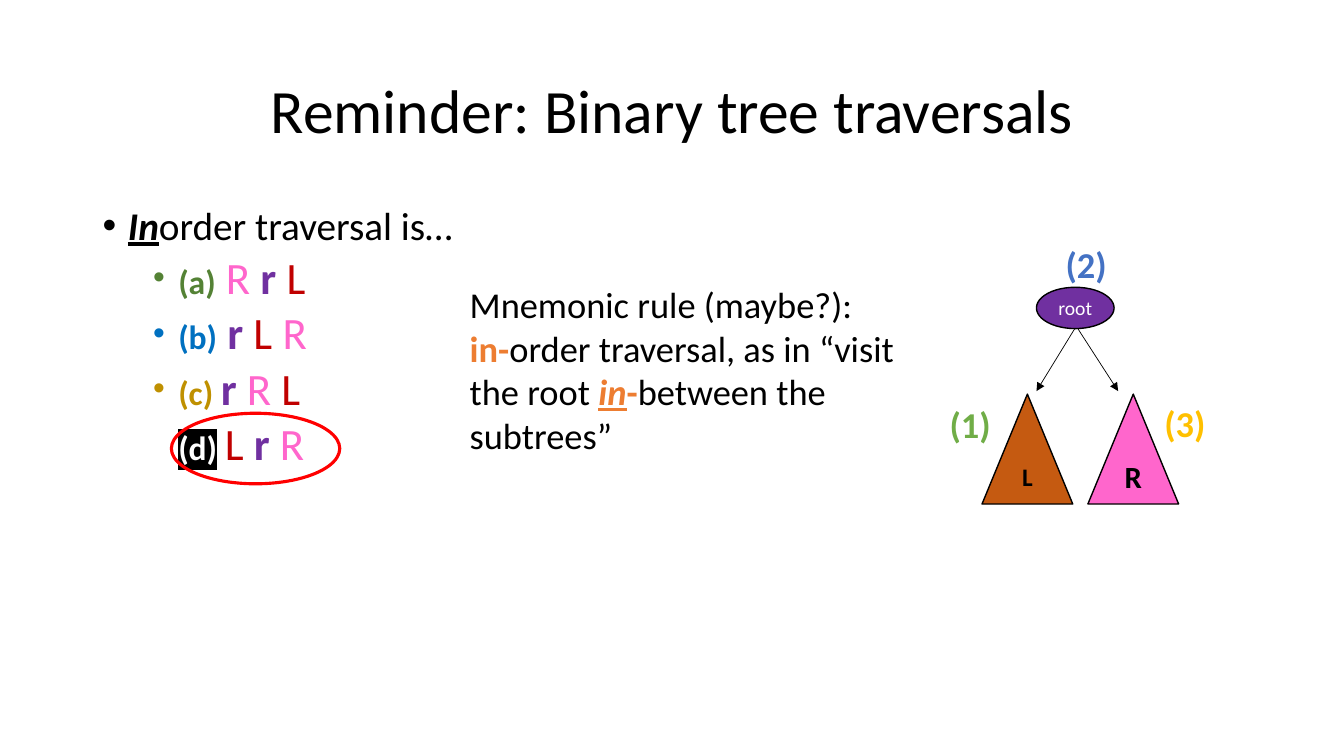
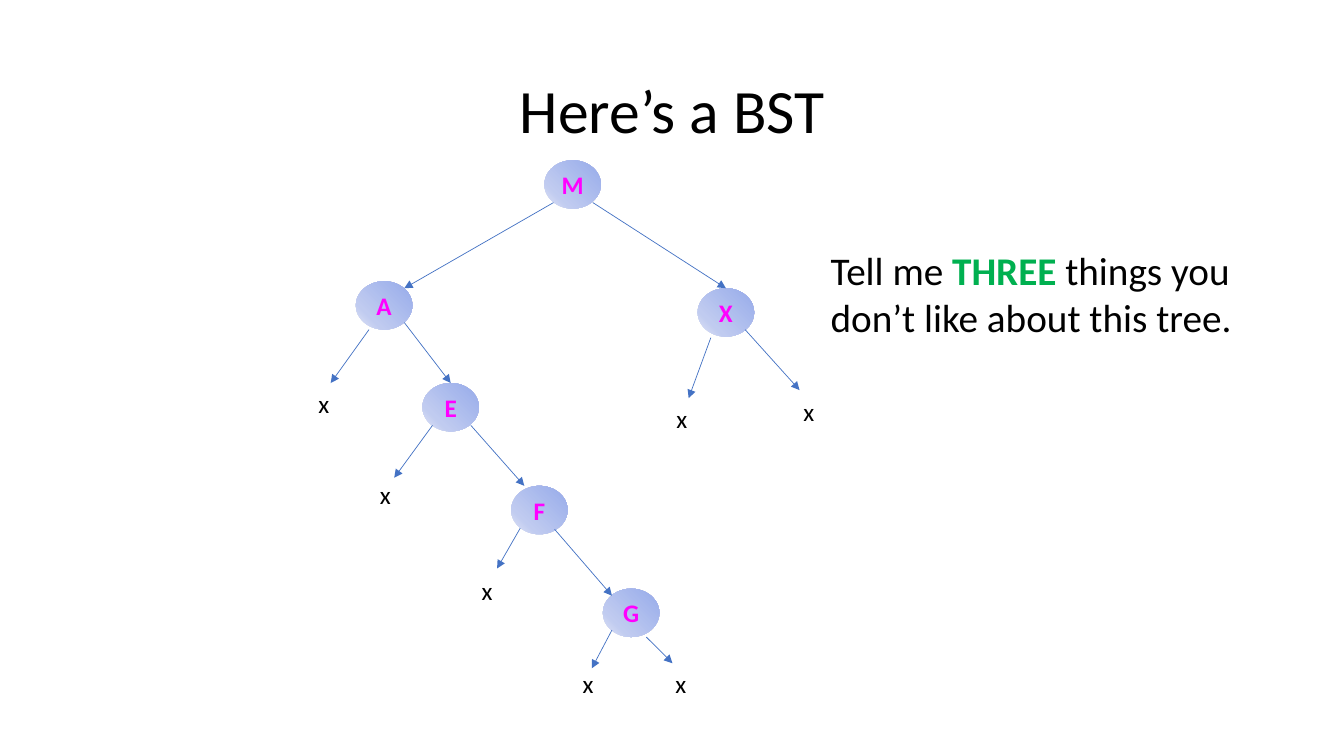
from dataclasses import dataclass
from typing import NamedTuple

from pptx import Presentation
from pptx.dml.color import RGBColor
from pptx.enum.shapes import MSO_CONNECTOR, MSO_SHAPE
from pptx.enum.text import MSO_ANCHOR, PP_ALIGN
from pptx.oxml import parse_xml
from pptx.oxml.ns import nsdecls, qn
from pptx.util import Inches, Pt

OVAL = MSO_SHAPE.OVAL
WEDGE = MSO_SHAPE.ISOSCELES_TRIANGLE
LINE = MSO_CONNECTOR.STRAIGHT
LEFT, CENTER = PP_ALIGN.LEFT, PP_ALIGN.CENTER
TOP, MIDDLE = MSO_ANCHOR.TOP, MSO_ANCHOR.MIDDLE

FONT = "Calibri"
NS = nsdecls("a")
HEX = {
    "black": "000000", "white": "FFFFFF", "red": "FF0000", "wine": "C00000",
    "pink": "FF66CC", "purple": "7030A0", "moss": "548235", "sky": "0070C0",
    "ochre": "BF9000", "rust": "C55A11", "leaf": "70AD47", "blue": "4472C4",
    "gold": "FFC000", "orange": "ED7D31", "neon": "FF00FF", "green": "00B050",
}
SHADE = ((0, "96ABEA"), (74, "C0CBF0"), (100, "E0E5F7"))


class Box(NamedTuple):
    left: float
    top: float
    wide: float
    high: float


class Point(NamedTuple):
    x: float
    y: float


@dataclass(frozen=True)
class Run:
    text: str
    size: float
    color: str = "black"
    bold: bool = False
    slant: bool = False
    under: bool = False
    mark: str = ""


@dataclass(frozen=True)
class Choice:
    name: str
    color: str
    order: str
    gap: int
    mark: str = ""


@dataclass(frozen=True)
class Node:
    key: str
    left: float
    top: float


@dataclass(frozen=True)
class Link:
    start: Point
    end: Point


TITLE = Box(0.92, 0.4, 11.5, 1.45)
BODY = Box(0.92, 2, 11.5, 4.76)

LETTERS = {"R": ("pink", False), "r": ("purple", True), "L": ("wine", False)}
CHOICES = (
    Choice("(a)", "moss", "RrL", 32),
    Choice("(b)", "sky", "rLR", 32),
    Choice("(c)", "ochre", "rRL", 24),
    Choice("(d)", "white", "LrR", 24, "black"),
)
STEPS = (
    (Run("(1)", 26, "leaf", True), Point(9.32, 3.94)),
    (Run("(2)", 26, "blue", True), Point(10.47, 2.35)),
    (Run("(3)", 26, "gold", True), Point(11.45, 3.93)),
)
TREES = (
    (Run("L", 18, bold=True), 9.74, "rust"),
    (Run("R", 22, bold=True), 10.79, "pink"),
)
FORKS = (
    Link(Point(10.66, 3.26), Point(10.28, 3.88)),
    Link(Point(10.69, 3.26), Point(11.09, 3.88)),
)
RULE = (
    Run("Mnemonic rule (maybe?): ", 26),
    Run("in-", 26, "orange", True),
    Run("order traversal, as in “visit the root ", 26),
    Run("in", 26, "orange", True, True, True),
    Run("-", 26, "orange", True),
    Run("between the subtrees”", 26),
)

NODES = (
    Node("M", 5.4, 1.59), Node("A", 3.53, 2.79), Node("X", 6.92, 2.86),
    Node("E", 4.19, 3.8), Node("F", 5.07, 4.82), Node("G", 5.98, 5.84),
)
LINKS = (
    Link(Point(5.49, 2.01), Point(4.01, 2.86)),
    Link(Point(5.88, 2.01), Point(7.2, 2.86)),
    Link(Point(7.05, 3.35), Point(6.83, 3.95)),
    Link(Point(7.39, 3.27), Point(7.93, 3.87)),
    Link(Point(3.66, 3.27), Point(3.28, 3.8)),
    Link(Point(4.01, 3.2), Point(4.47, 3.8)),
    Link(Point(4.29, 4.22), Point(3.91, 4.74)),
    Link(Point(4.67, 4.22), Point(5.2, 4.82)),
    Link(Point(5.16, 5.24), Point(4.93, 5.64)),
    Link(Point(5.5, 5.25), Point(6.07, 5.91)),
    Link(Point(6.07, 6.25), Point(5.87, 6.63)),
    Link(Point(6.41, 6.32), Point(6.67, 6.58)),
)
ENDS = (
    Point(6.61, 3.95), Point(7.87, 3.88), Point(3.06, 3.8), Point(3.67, 4.71),
    Point(4.68, 5.66), Point(5.68, 6.58), Point(6.6, 6.58),
)
TASK = (
    Run("Tell me ", 28),
    Run("THREE", 28, "green", True),
    Run(" things you don’t like about this tree.", 28),
)


def tint(name: str) -> RGBColor:
    return RGBColor.from_string(HEX[name])


def frame(box: Box) -> tuple:
    return tuple(Inches(size) for size in box)


def write(para, runs) -> None:
    for item in runs:
        run = para.add_run()
        run.text = item.text
        font = run.font
        font.name, font.size = FONT, Pt(item.size)
        font.bold, font.italic, font.underline = item.bold, item.slant, item.under
        font.color.rgb = tint(item.color)
        if item.mark:
            fill = run._r.get_or_add_rPr().find(qn("a:solidFill"))
            fill.addnext(parse_xml(
                f'<a:highlight {NS}><a:srgbClr val="{HEX[item.mark]}"/></a:highlight>'))


def add_text(slide, box: Box, runs, align=LEFT, anchor=TOP):
    text = slide.shapes.add_textbox(*frame(box)).text_frame
    text.word_wrap = True
    text.vertical_anchor = anchor
    para = text.paragraphs[0]
    para.alignment = align
    write(para, runs)
    return text


def add_title(slide, words: str) -> None:
    text = add_text(slide, TITLE, [Run(words, 44)], CENTER, MIDDLE)
    text.paragraphs[0].line_spacing = 0.9


def add_shape(slide, kind, box: Box, runs=(), fill="", line="", width=1.0):
    shape = slide.shapes.add_shape(kind, *frame(box))
    shape.shadow.inherit = False
    if fill:
        shape.fill.solid()
        shape.fill.fore_color.rgb = tint(fill)
    else:
        shape.fill.background()
    if line:
        shape.line.color.rgb = tint(line)
        shape.line.width = Pt(width)
    else:
        shape.line.fill.background()
    text = shape.text_frame
    text.margin_left = text.margin_right = text.margin_top = text.margin_bottom = 0
    text.vertical_anchor = MIDDLE
    text.paragraphs[0].alignment = CENTER
    write(text.paragraphs[0], runs)
    return shape


def shade(shape) -> None:
    stops = "".join(
        f'<a:gs pos="{spot * 1000}"><a:srgbClr val="{color}"/></a:gs>'
        for spot, color in SHADE)
    props = shape._element.spPr
    props.replace(props.find(qn("a:noFill")), parse_xml(
        f'<a:gradFill {NS} rotWithShape="1"><a:gsLst>{stops}</a:gsLst>'
        '<a:path path="circle"><a:fillToRect l="100000" b="100000"/></a:path>'
        '<a:tileRect t="-100000" r="-100000"/></a:gradFill>'))


def add_arrow(slide, link: Link, color: str) -> None:
    ends = (*link.start, *link.end)
    arrow = slide.shapes.add_connector(LINE, *(Inches(size) for size in ends))
    arrow.line.color.rgb = tint(color)
    arrow.line.width = Pt(0.5)
    arrow.line._get_or_add_ln().append(parse_xml(f'<a:tailEnd {NS} type="triangle"/>'))
    arrow._element.spPr.append(parse_xml(f"<a:effectLst {NS}/>"))


def bullet(para, indent: float, before: int) -> None:
    para.line_spacing = 0.9
    para.space_before = Pt(before)
    props = para._p.get_or_add_pPr()
    props.set("marL", str(Inches(indent)))
    props.set("indent", str(-Inches(0.25)))
    props.append(parse_xml(f'<a:buFont {NS} typeface="Arial"/>'))
    props.append(parse_xml(f'<a:buChar {NS} char="•"/>'))


def spell(choice: Choice) -> list:
    runs = [Run(choice.name, 24, choice.color, True, mark=choice.mark),
            Run(" ", choice.gap)]
    last = len(choice.order) - 1
    for spot, key in enumerate(choice.order):
        color, bold = LETTERS[key]
        runs.append(Run(key if spot == last else key + " ", 32, color, bold))
    return runs


def draw_order(slide) -> None:
    add_title(slide, "Reminder: Binary tree traversals")
    head = (Run("In", 28, bold=True, slant=True, under=True),
            Run("order traversal is…", 28))
    body = add_text(slide, BODY, head)
    bullet(body.paragraphs[0], 0.25, 10)
    for choice in CHOICES:
        para = body.add_paragraph()
        bullet(para, 0.75, 5)
        write(para, spell(choice))
    add_shape(slide, OVAL, Box(10.28, 2.85, 0.77, 0.41),
              [Run("root", 14, "white")], "purple", "black")
    for link in FORKS:
        add_arrow(slide, link, "black")
    for run, left, fill in TREES:
        add_shape(slide, WEDGE, Box(left, 3.91, 0.9, 1.09), [run], fill, "black")
    add_shape(slide, OVAL, Box(1.7, 4.1, 1.67, 0.7), line="red", width=2.25)
    for run, spot in STEPS:
        add_text(slide, Box(*spot, 0.7, 0.54), [run])
    add_text(slide, Box(4.56, 2.75, 4.43, 1.85), RULE)


def draw_search(slide) -> None:
    add_title(slide, "Here’s a BST")
    for node in NODES:
        shade(add_shape(slide, OVAL, Box(node.left, node.top, 0.56, 0.48),
                        [Run(node.key, 18, "neon", True)]))
    for link in LINKS:
        add_arrow(slide, link, "blue")
    for spot in ENDS:
        add_text(slide, Box(*spot, 0.43, 0.4), [Run("x", 18)])
    add_text(slide, Box(8.14, 2.39, 4.81, 1.04), TASK)


def main() -> None:
    deck = Presentation()
    deck.slide_width, deck.slide_height = Inches(13.33), Inches(7.5)
    blank = deck.slide_layouts[6]
    for draw in (draw_order, draw_search):
        draw(deck.slides.add_slide(blank))
    deck.save("out.pptx")


if __name__ == "__main__":
    main()
